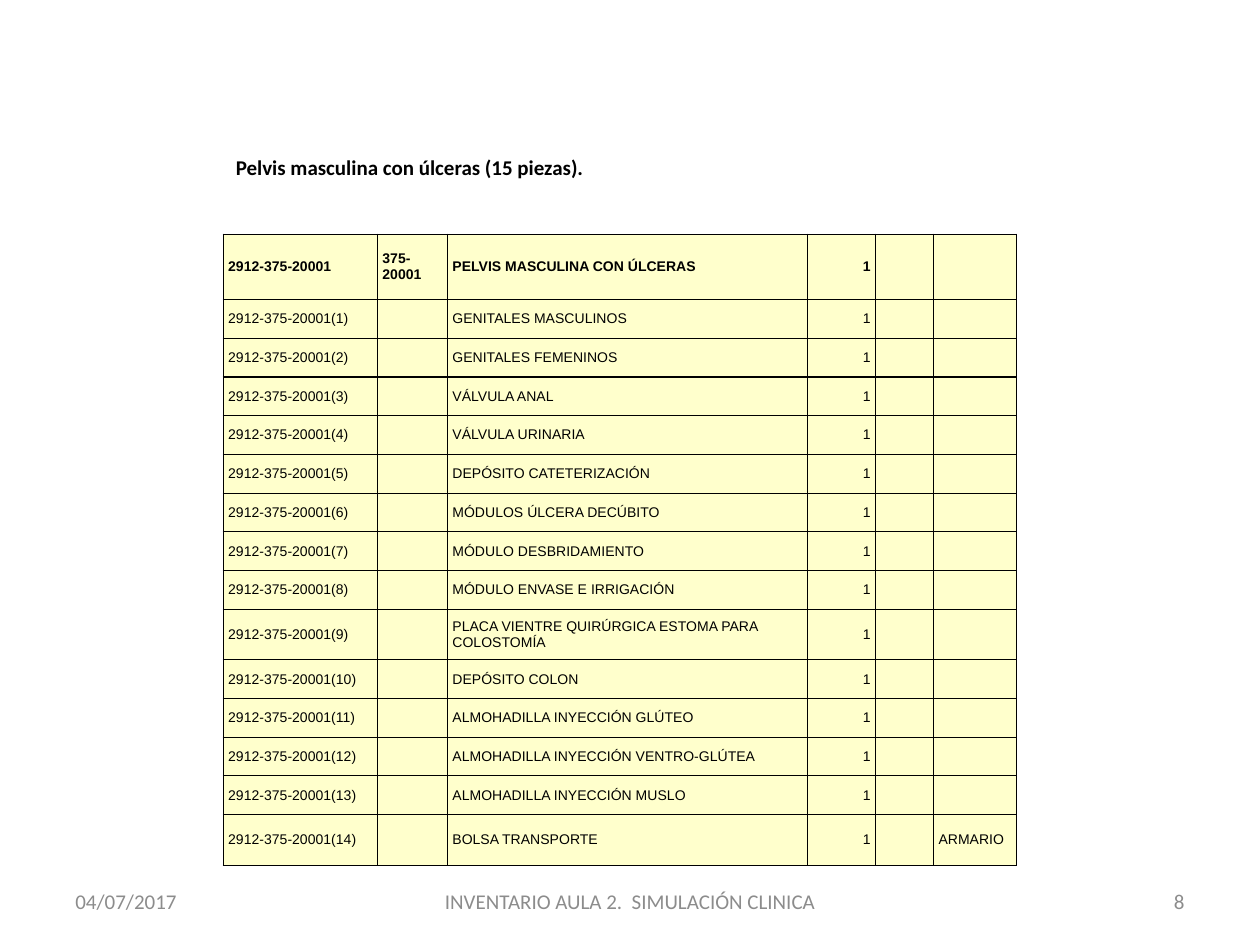
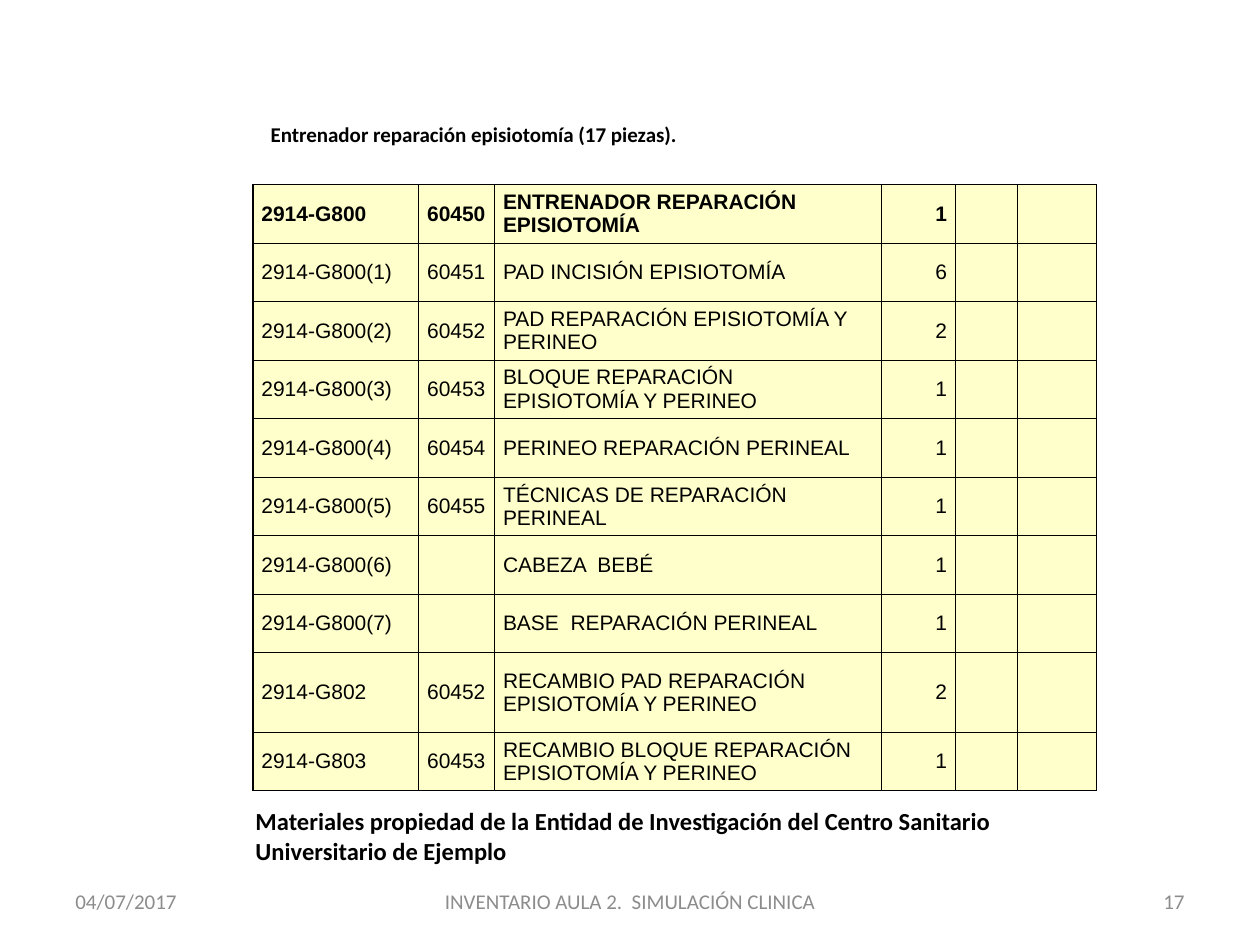
from dataclasses import dataclass

import lxml.etree
import pptx
import pptx.dml.color
import pptx.enum.text
import pptx.oxml.ns
import pptx.presentation
import pptx.shapes.base
import pptx.slide
import pptx.table
import pptx.text.text
import pptx.util

Cm = pptx.util.Cm
Pt = pptx.util.Pt
Align = pptx.enum.text.PP_ALIGN
Anchor = pptx.enum.text.MSO_ANCHOR

# Shared look
BLACK, GREY, CREAM = "000000", "8C8C8C", "FFFFCC"
TITLE_FONT, TABLE_FONT = "Calibri", "Arial"
TITLE_ONLY_LAYOUT = 5
QUANTITY_COLUMN = 3
DATE = "04/07/2017"
FOOTER = "INVENTARIO AULA 2.  SIMULACIÓN CLINICA"


@dataclass(frozen=True)
class Box:
    """Left, top, width and height in centimetres."""
    left: float
    top: float
    width: float
    height: float


@dataclass(frozen=True)
class TextStyle:
    size: float
    color: str = BLACK
    bold: bool = False
    font: str = TITLE_FONT
    align: Align = Align.LEFT


@dataclass(frozen=True)
class Item:
    code: str
    reference: str
    name: str
    quantity: int = 1
    place: str = ""
    height: float | None = None

    def values(self) -> list[str]:
        return [self.code, self.reference, self.name, str(self.quantity), "", self.place]


@dataclass(frozen=True)
class Inventory:
    left: float
    top: float
    columns: list[float]
    row_height: float
    font_size: float
    margin_x: float
    margin_y: float
    items: list[Item]


@dataclass(frozen=True)
class InventorySlide:
    number: int
    title: str
    title_box: Box
    inventory: Inventory
    note: str = ""


TITLE_STYLE = TextStyle(12, bold=True)
NOTE_STYLE = TextStyle(14, bold=True)
NOTE_BOX = Box(4.9, 16.13, 17.6, 1.45)
DATE_BOX = Box(1.27, 17.66, 5.93, 1.01)
FOOTER_BOX = Box(8.68, 17.66, 8.05, 1.01)
NUMBER_BOX = Box(18.2, 17.66, 5.93, 1.01)

# Contents: pelvis trainer
PELVIS_CODE = "2912-375-20001"
PELVIS_PARTS = [
    "GENITALES MASCULINOS", "GENITALES FEMENINOS", "VÁLVULA ANAL", "VÁLVULA URINARIA",
    "DEPÓSITO CATETERIZACIÓN", "MÓDULOS ÚLCERA DECÚBITO", "MÓDULO DESBRIDAMIENTO",
    "MÓDULO ENVASE E IRRIGACIÓN", "PLACA VIENTRE QUIRÚRGICA ESTOMA PARA COLOSTOMÍA",
    "DEPÓSITO COLON", "ALMOHADILLA INYECCIÓN GLÚTEO",
    "ALMOHADILLA INYECCIÓN VENTRO-GLÚTEA", "ALMOHADILLA INYECCIÓN MUSLO",
]
TALL_PART = 9
PELVIS_ITEMS = [
    Item(PELVIS_CODE, "375-20001", "PELVIS MASCULINA CON ÚLCERAS", height=1.32),
    *(Item(f"{PELVIS_CODE}({index})", "", name, height=1.02 if index == TALL_PART else None)
      for index, name in enumerate(PELVIS_PARTS, start=1)),
    Item(f"{PELVIS_CODE}(14)", "", "BOLSA TRANSPORTE", place="ARMARIO", height=1.02),
]

# Contents: episiotomy trainer
REPAIR_CODE = "2914-G800"
REPAIR_PARTS = [
    ("60451", "PAD INCISIÓN EPISIOTOMÍA", 6),
    ("60452", "PAD REPARACIÓN EPISIOTOMÍA Y PERINEO", 2),
    ("60453", "BLOQUE REPARACIÓN EPISIOTOMÍA Y PERINEO", 1),
    ("60454", "PERINEO REPARACIÓN PERINEAL", 1),
    ("60455", "TÉCNICAS DE REPARACIÓN PERINEAL", 1),
    ("", "CABEZA  BEBÉ", 1),
    ("", "BASE  REPARACIÓN PERINEAL", 1),
]
REPAIR_ITEMS = [
    Item(REPAIR_CODE, "60450", "ENTRENADOR REPARACIÓN EPISIOTOMÍA"),
    *(Item(f"{REPAIR_CODE}({index})", *part) for index, part in enumerate(REPAIR_PARTS, start=1)),
    Item("2914-G802", "60452", "RECAMBIO PAD REPARACIÓN EPISIOTOMÍA Y PERINEO", 2, height=1.6),
    Item("2914-G803", "60453", "RECAMBIO BLOQUE REPARACIÓN EPISIOTOMÍA Y PERINEO"),
]

SLIDES = [
    InventorySlide(
        8, "Pelvis masculina con úlceras (15 piezas).", Box(4.5, 2.99, 15.8, 0.77),
        Inventory(4.5, 4.72, [3.11, 1.41, 7.26, 1.37, 1.17, 1.68], 0.78, 8, 0.1, 0.05,
                  PELVIS_ITEMS)),
    InventorySlide(
        17, "Entrenador reparación episiotomía (17 piezas).", Box(5.2, 2.33, 17, 0.77),
        Inventory(5.1, 3.72, [3.34, 1.53, 7.8, 1.49, 1.25, 1.59], 1.18, 12, 0.17, 0.08,
                  REPAIR_ITEMS),
        "Materiales propiedad de la Entidad de Investigación del Centro Sanitario "
        "Universitario de Ejemplo"),
]


def rgb(color: str) -> pptx.dml.color.RGBColor:
    return pptx.dml.color.RGBColor.from_string(color)


def write(text_frame: pptx.text.text.TextFrame, text: str, style: TextStyle) -> None:
    text_frame.text = text
    text_frame.word_wrap = True
    paragraph = text_frame.paragraphs[0]
    paragraph.alignment = style.align
    for run in paragraph.runs:
        run.font.name = style.font
        run.font.size = Pt(style.size)
        run.font.bold = style.bold
        run.font.color.rgb = rgb(style.color)


def place(shape: pptx.shapes.base.BaseShape, box: Box) -> None:
    shape.left, shape.top = Cm(box.left), Cm(box.top)
    shape.width, shape.height = Cm(box.width), Cm(box.height)


def add_title(slide: pptx.slide.Slide, text: str, box: Box) -> None:
    title = slide.shapes.title
    place(title, box)
    write(title.text_frame, text, TITLE_STYLE)
    title.text_frame.vertical_anchor = Anchor.TOP
    title.text_frame.auto_size = pptx.enum.text.MSO_AUTO_SIZE.NONE


def add_text(slide: pptx.slide.Slide, text: str, box: Box, style: TextStyle,
             anchor: Anchor = Anchor.TOP) -> None:
    shape = slide.shapes.add_textbox(0, 0, 0, 0)
    place(shape, box)
    write(shape.text_frame, text, style)
    shape.text_frame.vertical_anchor = anchor


def add_footers(slide: pptx.slide.Slide, number: int) -> None:
    for text, box, align in (
        (DATE, DATE_BOX, Align.LEFT),
        (FOOTER, FOOTER_BOX, Align.CENTER),
        (str(number), NUMBER_BOX, Align.RIGHT),
    ):
        add_text(slide, text, box, TextStyle(12, GREY, align=align), Anchor.MIDDLE)


def add_borders(cell: pptx.table._Cell) -> None:
    qn = pptx.oxml.ns.qn
    properties = cell._tc.get_or_add_tcPr()
    for side in ("a:lnL", "a:lnR", "a:lnT", "a:lnB"):
        line = lxml.etree.SubElement(properties, qn(side), w=str(Pt(0.75)))
        fill = lxml.etree.SubElement(line, qn("a:solidFill"))
        lxml.etree.SubElement(fill, qn("a:srgbClr"), val=BLACK)


def fill_cell(cell: pptx.table._Cell, text: str, style: TextStyle, inventory: Inventory) -> None:
    cell.margin_left = cell.margin_right = Cm(inventory.margin_x)
    cell.margin_top = cell.margin_bottom = Cm(inventory.margin_y)
    cell.vertical_anchor = Anchor.MIDDLE
    add_borders(cell)
    cell.fill.solid()
    cell.fill.fore_color.rgb = rgb(CREAM)
    write(cell.text_frame, text, style)
    # The end mark sets the line height of empty cells
    lxml.etree.SubElement(cell.text_frame.paragraphs[0]._p, pptx.oxml.ns.qn("a:endParaRPr"),
                          sz=str(int(style.size * 100)))


def add_inventory(slide: pptx.slide.Slide, inventory: Inventory) -> None:
    heights = [item.height or inventory.row_height for item in inventory.items]
    table = slide.shapes.add_table(
        len(heights), len(inventory.columns), Cm(inventory.left), Cm(inventory.top),
        Cm(sum(inventory.columns)), Cm(sum(heights))).table
    table.first_row = table.horz_banding = False
    for column, width in zip(table.columns, inventory.columns):
        column.width = Cm(width)
    for row_index, (item, height) in enumerate(zip(inventory.items, heights)):
        table.rows[row_index].height = Cm(height)
        for column_index, text in enumerate(item.values()):
            align = Align.RIGHT if column_index == QUANTITY_COLUMN else Align.LEFT
            style = TextStyle(inventory.font_size, bold=row_index == 0, font=TABLE_FONT,
                              align=align)
            fill_cell(table.cell(row_index, column_index), text, style, inventory)


def add_slide(presentation: pptx.presentation.Presentation, content: InventorySlide) -> None:
    slide = presentation.slides.add_slide(presentation.slide_layouts[TITLE_ONLY_LAYOUT])
    add_title(slide, content.title, content.title_box)
    add_footers(slide, content.number)
    add_inventory(slide, content.inventory)
    if content.note:
        add_text(slide, content.note, NOTE_BOX, NOTE_STYLE)


def main() -> None:
    presentation = pptx.Presentation()
    presentation.slide_width, presentation.slide_height = Cm(25.4), Cm(19.05)
    for content in SLIDES:
        add_slide(presentation, content)
    presentation.save("out.pptx")


if __name__ == "__main__":
    main()
